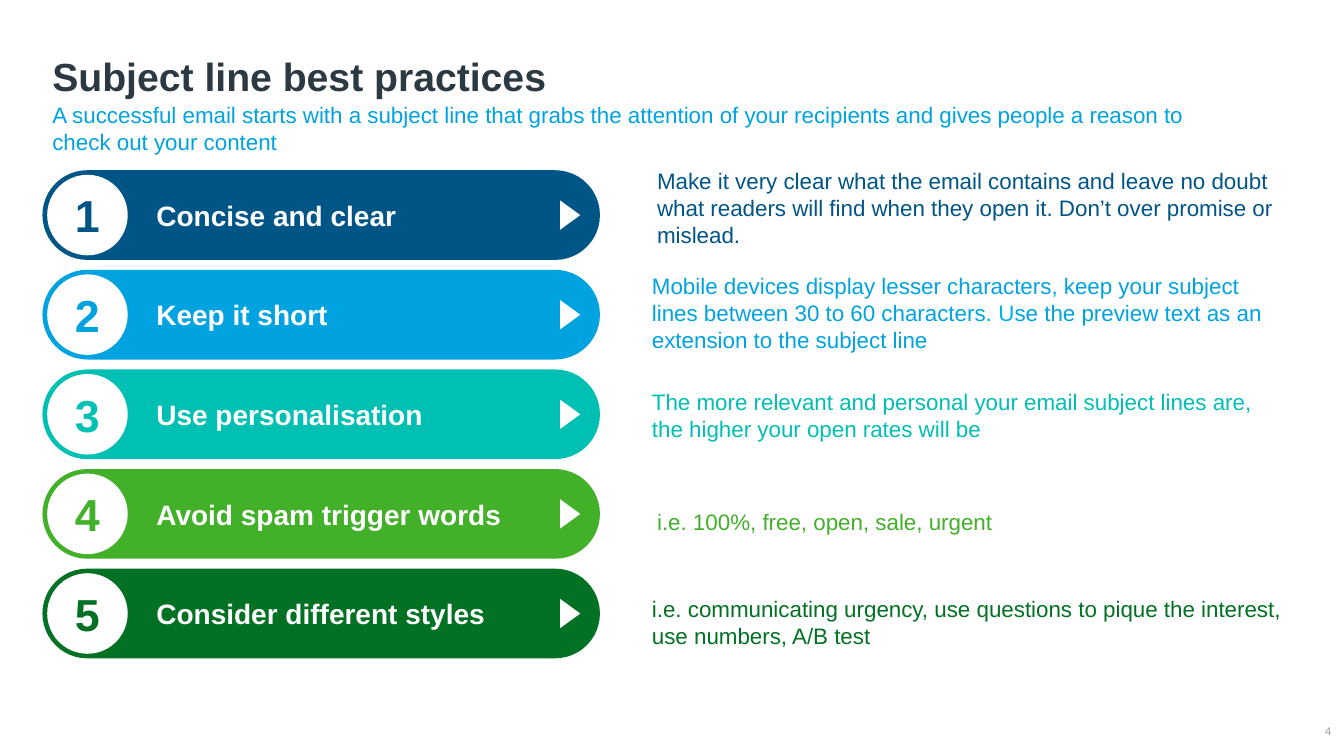
from dataclasses import dataclass

from pptx import Presentation
from pptx.dml.color import RGBColor
from pptx.enum.shapes import MSO_SHAPE as Shape
from pptx.enum.text import MSO_ANCHOR as Anchor, PP_ALIGN as Align
from pptx.util import Cm, Pt


@dataclass(frozen=True)
class Theme:
    font: str = "Arial"
    white: str = "FFFFFF"
    ink: str = "2B3A42"
    grey: str = "959CA0"
    navy: str = "005587"
    blue: str = "00A3E0"
    bright_blue: str = "00B0F0"
    teal: str = "00BFB3"
    green: str = "43B02A"
    forest: str = "027123"
    title: int = 28
    number: int = 32
    heading: int = 20
    body: int = 16
    footer: int = 8


T = Theme()


@dataclass(frozen=True)
class Run:
    text: str
    color: str


@dataclass(frozen=True)
class Practice:
    heading: str
    color: str
    detail: list[Run]
    detail_left: float
    detail_top: float


PRACTICES = [
    Practice("Concise and clear", T.navy, [
        Run("Make it very clear what the email contains and leave no doubt what "
            "readers will find when they open it. Don’t over promise or mislead.", T.navy),
    ], 16.31, 4.42),
    Practice("Keep it short", T.blue, [
        Run("Mobile devices display lesser characters, keep your subject lines "
            "between 30 to 60 characters. ", T.blue),
        Run("U", T.bright_blue),
        Run("se the preview text as an extension to the subject line", T.blue),
    ], 16.18, 7.06),
    Practice("Use personalisation", T.teal, [
        Run("The more relevant and personal your email subject lines are, "
            "the higher your open rates will be", T.teal),
    ], 16.18, 9.65),
    Practice("Avoid spam trigger words", T.green, [
        Run("i.e. 100%, free, open, sale, urgent", T.green),
    ], 16.31, 12.32),
    Practice("Consider different styles", T.forest, [
        Run("i.e. communicating urgency, use questions to pique the interest, "
            "use numbers, A/B test", T.forest),
    ], 16.18, 14.86),
]

# Row geometry in centimetres
LEFT, FIRST_TOP, PITCH = 1.07, 4.29, 2.51
BAR_W, BAR_H = 14.05, 2.26
DISC, DISC_INSET = 2.03, 0.12
ARROW_LEFT, ARROW_W, ARROW_H = 14.0, 0.74, 0.51
DETAIL_W, DETAIL_H = 16.48, 1.63


def write(sp, runs: list[Run], *, size: int, bold: bool = False,
          align=Align.LEFT, anchor=Anchor.MIDDLE, line_spacing: float = 1.0,
          insets: tuple[float, float, float, float] = (0.25, 0.13, 0.25, 0.13)) -> None:
    """Write one formatted paragraph into a shape; insets run left, top, right, bottom."""
    tf = sp.text_frame
    tf.word_wrap = True
    tf.vertical_anchor = anchor
    (tf.margin_left, tf.margin_top,
     tf.margin_right, tf.margin_bottom) = map(Cm, insets)
    p = tf.paragraphs[0]
    p.alignment = align
    p.line_spacing = line_spacing
    for run in runs:
        r = p.add_run()
        r.text = run.text
        r.font.name = T.font
        r.font.size = Pt(size)
        r.font.bold = bold
        r.font.color.rgb = RGBColor.from_string(run.color)


def add_text(s, left: float, top: float, width: float, height: float,
             runs: list[Run], **fmt) -> None:
    sp = s.shapes.add_textbox(Cm(left), Cm(top), Cm(width), Cm(height))
    write(sp, runs, **fmt)


def add_filled(s, kind: Shape, left: float, top: float, width: float,
               height: float, color: str):
    sp = s.shapes.add_shape(kind, Cm(left), Cm(top), Cm(width), Cm(height))
    sp.shadow.inherit = False
    sp.fill.solid()
    sp.fill.fore_color.rgb = RGBColor.from_string(color)
    sp.line.fill.background()
    return sp


def add_practice(s, number: int, item: Practice) -> None:
    top = FIRST_TOP + (number - 1) * PITCH

    # Coloured bar with heading
    bar = add_filled(s, Shape.ROUNDED_RECTANGLE, LEFT, top, BAR_W, BAR_H, item.color)
    bar.adjustments[0] = 0.5
    write(bar, [Run(item.heading, T.white)], size=T.heading, bold=True,
          insets=(2.54, 0, 0, 0))

    # Numbered disc
    disc = add_filled(s, Shape.OVAL, LEFT + DISC_INSET, top + (BAR_H - DISC) / 2,
                      DISC, DISC, T.white)
    write(disc, [Run(str(number), item.color)], size=T.number, bold=True,
          align=Align.CENTER)

    # Arrow pointing right
    arrow = add_filled(s, Shape.FLOWCHART_MERGE, ARROW_LEFT,
                       top + (BAR_H - ARROW_H) / 2, ARROW_W, ARROW_H, T.white)
    arrow.rotation = 270

    # Explanation
    add_text(s, item.detail_left, item.detail_top, DETAIL_W, DETAIL_H,
             item.detail, size=T.body)


def main() -> None:
    prs = Presentation()
    prs.slide_width, prs.slide_height = Cm(33.87), Cm(19.05)
    s = prs.slides.add_slide(prs.slide_layouts[6])

    # Title and subtitle
    add_text(s, LEFT, 0.51, 31.5, 2.13, [Run("Subject line best practices", T.ink)],
             size=T.title, bold=True, anchor=Anchor.BOTTOM, line_spacing=0.9)
    add_text(s, LEFT, 2.41, 29.57, 1.63,
             [Run("A successful email starts with a subject line that grabs the "
                  "attention of your recipients and gives people a reason to "
                  "check out your content", T.blue)],
             size=T.body, anchor=Anchor.TOP)

    # Practices
    for number, item in enumerate(PRACTICES, start=1):
        add_practice(s, number, item)

    # Page number
    add_text(s, 32.56, 18.19, 0.99, 0.48, [Run("4", T.grey)], size=T.footer,
             align=Align.RIGHT, insets=(0, 0, 0, 0))

    prs.save("out.pptx")


if __name__ == "__main__":
    main()
